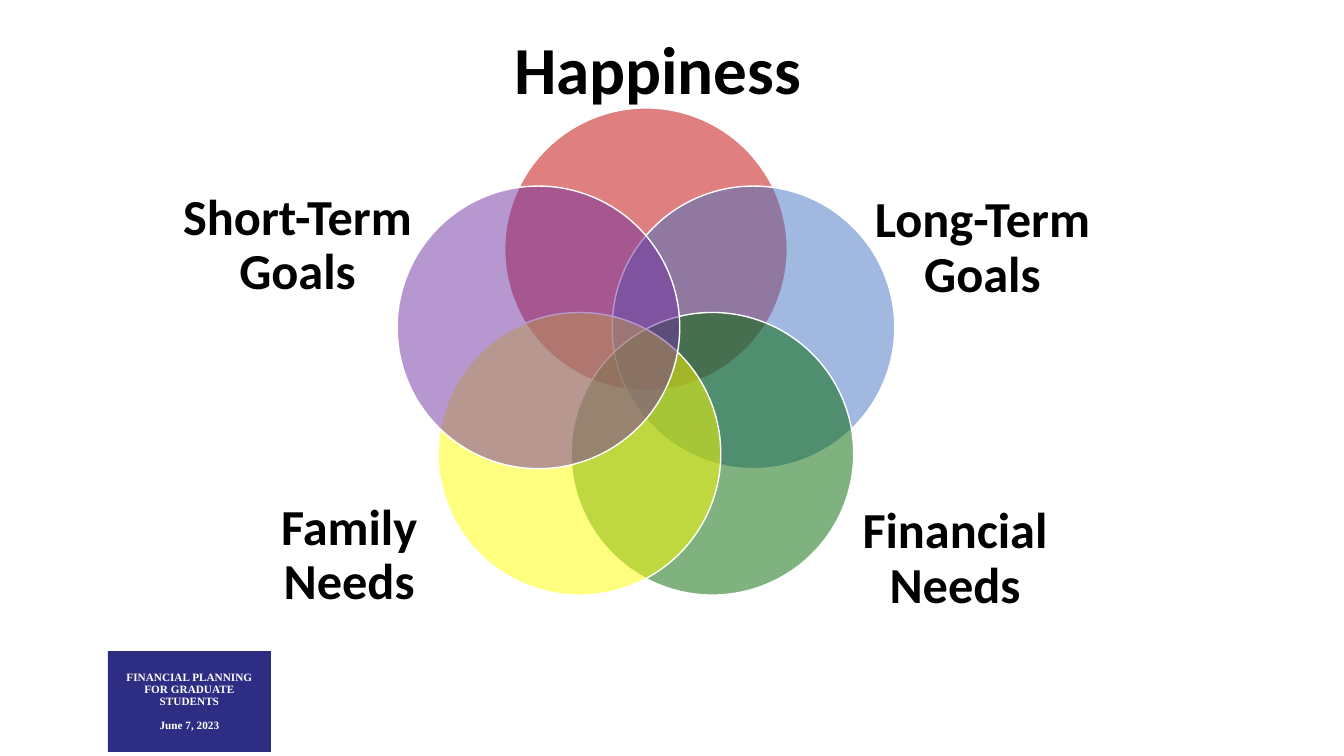
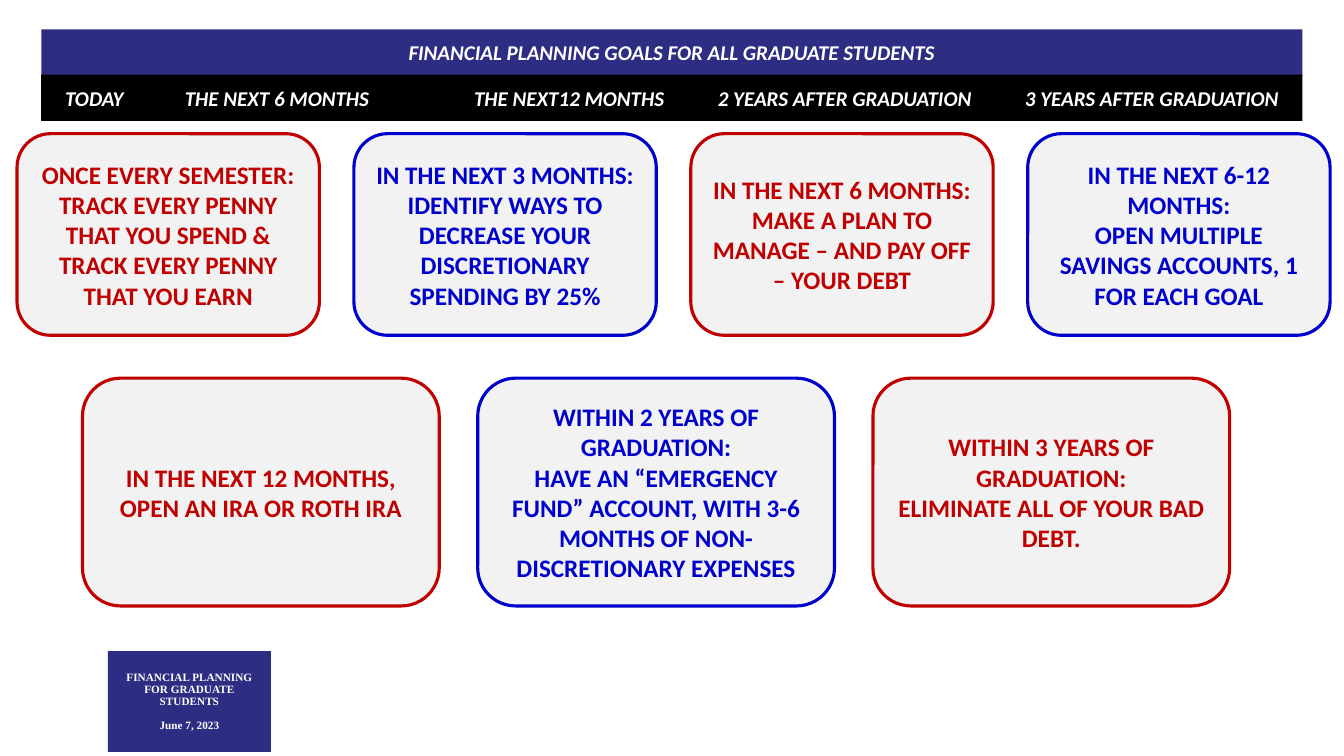
import dataclasses
import math

import lxml.etree
import pptx
import pptx.dml.color
import pptx.enum.shapes
import pptx.enum.text
import pptx.oxml.ns
import pptx.util

Cm = pptx.util.Cm
Pt = pptx.util.Pt
qn = pptx.oxml.ns.qn
SHAPE = pptx.enum.shapes.MSO_SHAPE
ALIGN = pptx.enum.text.PP_ALIGN


@dataclasses.dataclass(frozen=True)
class Theme:
    font: str = "Calibri"
    badge_font: str = "Times New Roman"
    navy: str = "2D2D83"
    black: str = "000000"
    white: str = "FFFFFF"
    card: str = "F2F2F2"
    red: str = "C00000"
    blue: str = "0000CC"
    sky: str = "4472C4"
    green: str = "006600"
    yellow: str = "FFFF00"
    purple: str = "7030A0"
    headline_size: int = 48
    label_size: int = 36
    card_size: int = 18
    band_size: int = 15
    badge_size: int = 8


@dataclasses.dataclass(frozen=True)
class Box:
    left: float
    top: float
    width: float
    height: float


THEME = Theme()
BADGE_BOX = Box(2.72, 16.41, 4.11, 2.54)
HEADLINE_BOX = Box(12.45, 0.73, 8.26, 2.2)
VENN_BOX = Box(3.8, 2.72, 24.96, 12.82)
TITLE_BAND_BOX = Box(1.04, 0.74, 31.78, 1.17)
TIMELINE_BOX = Box(1.04, 1.88, 31.78, 1.17)
FIRST_ROW_BOX = Box(0.43, 3.37, 33.09, 5.08)
SECOND_ROW_BOX = Box(2.08, 9.53, 28.91, 5.74)

CIRCLE_COLORS = [THEME.red, THEME.sky, THEME.green, THEME.yellow, THEME.purple]
VENN_LABELS = [
    ("Long-Term Goals", 8.48, -2.86, 7.39),
    ("Financial Needs", 7.79, 4.97, 5.31),
    ("Family Needs", -7.48, 4.89, 5.31),
    ("Short-Term Goals", -8.78, -2.93, 7.39),
]
TIMELINE = [
    "TODAY",
    "THE NEXT 6 MONTHS",
    "THE NEXT12 MONTHS",
    "2 YEARS AFTER GRADUATION",
    "3 YEARS AFTER GRADUATION",
]
TIMELINE_STOPS = [3.02, 10.31, 16.45, 24.19]
FIRST_ROW = [
    ["ONCE EVERY SEMESTER:", "TRACK EVERY PENNY THAT YOU SPEND & TRACK EVERY PENNY THAT YOU EARN"],
    ["IN THE NEXT 3 MONTHS:", "IDENTIFY WAYS TO DECREASE YOUR DISCRETIONARY SPENDING BY 25%"],
    ["IN THE NEXT 6 MONTHS:", "MAKE A PLAN TO MANAGE – AND PAY OFF – YOUR DEBT"],
    ["IN THE NEXT 6-12 MONTHS:", "OPEN MULTIPLE SAVINGS ACCOUNTS, 1 FOR EACH GOAL"],
]
SECOND_ROW = [
    ["IN THE NEXT 12 MONTHS, OPEN AN IRA OR ROTH IRA"],
    [
        "WITHIN 2 YEARS OF GRADUATION:",
        "HAVE AN “EMERGENCY FUND” ACCOUNT, WITH 3-6 MONTHS OF NON-DISCRETIONARY EXPENSES",
    ],
    ["WITHIN 3 YEARS OF GRADUATION:", "ELIMINATE ALL OF YOUR BAD DEBT."],
]


def rgb(color):
    return pptx.dml.color.RGBColor.from_string(color)


def place(shape, box):
    shape.left, shape.top = Cm(box.left), Cm(box.top)
    shape.width, shape.height = Cm(box.width), Cm(box.height)


def set_inset(frame, inset):
    frame.margin_left = frame.margin_right = Cm(inset)
    frame.margin_top = frame.margin_bottom = Cm(inset)


def add_tab_stops(para, stops):
    tabs = lxml.etree.SubElement(para._p.get_or_add_pPr(), qn("a:tabLst"))
    for stop in stops:
        lxml.etree.SubElement(tabs, qn("a:tab"), pos=str(Cm(stop)), algn="l")


def write(frame, lines, size, color, font=THEME.font, italic=False, align=ALIGN.CENTER,
          spacing=1.0, gap=0, stops=()):
    frame.word_wrap = True
    frame.auto_size = pptx.enum.text.MSO_AUTO_SIZE.NONE
    frame.vertical_anchor = pptx.enum.text.MSO_ANCHOR.MIDDLE
    for index, line in enumerate(lines):
        para = frame.add_paragraph() if index else frame.paragraphs[0]
        para.alignment = align
        para.line_spacing = spacing
        para.space_before = Pt(gap if index else 0)
        if stops:
            add_tab_stops(para, stops)
        span = para.add_run()
        span.text = line
        span.font.name = font
        span.font.size = Pt(size)
        span.font.bold = True
        span.font.italic = italic
        span.font.color.rgb = rgb(color)


def add_panel(page, kind, box, fill, line=None, line_width=1.0):
    panel = page.shapes.add_shape(
        kind, Cm(box.left), Cm(box.top), Cm(box.width), Cm(box.height))
    panel.shadow.inherit = False
    panel.fill.solid()
    panel.fill.fore_color.rgb = rgb(fill)
    if line:
        panel.line.color.rgb = rgb(line)
        panel.line.width = Pt(line_width)
    else:
        panel.line.fill.background()
    return panel


def make_translucent(shape, percent):
    color = shape.element.spPr.find(qn("a:solidFill"))[0]
    lxml.etree.SubElement(color, qn("a:alpha"), val=str(percent * 1000))


def add_badge(page, layout, box):
    badge = add_panel(page, SHAPE.RECTANGLE, box, THEME.navy)
    write(badge.text_frame, ["FINANCIAL PLANNING FOR GRADUATE STUDENTS", "June 7, 2023"],
          THEME.badge_size, THEME.white, font=THEME.badge_font, spacing=0.9, gap=8.6)
    badge.element.nvSpPr.cNvPr.set("id", "20")
    layout.shapes.element.append(badge.element)


def add_title(page, box, text, size, color, fill=None, **text_format):
    title = page.shapes.title
    place(title, box)
    if fill:
        title.fill.solid()
        title.fill.fore_color.rgb = rgb(fill)
    set_inset(title.text_frame, 0)
    write(title.text_frame, [text], size, color, **text_format)


def add_venn(page, box):
    center_x = box.left + box.width / 2
    center_y = box.top + box.height / 2
    diameter = box.height * 5 / 9
    reach = (box.height - diameter) / 2
    for index, color in enumerate(CIRCLE_COLORS):
        angle = math.tau * index / len(CIRCLE_COLORS)
        left = center_x + reach * math.sin(angle) - diameter / 2
        top = center_y - reach * math.cos(angle) - diameter / 2
        circle = add_panel(page, SHAPE.OVAL, Box(left, top, diameter, diameter),
                           color, line=THEME.white)
        make_translucent(circle, 50)
    height = 5.18
    for text, across, down, width in VENN_LABELS:
        label = page.shapes.add_textbox(
            Cm(center_x + across - width / 2), Cm(center_y + down - height / 2),
            Cm(width), Cm(height))
        set_inset(label.text_frame, 0)
        write(label.text_frame, [text], THEME.label_size, THEME.black, spacing=0.9)


def add_timeline(page, box):
    band = add_panel(page, SHAPE.RECTANGLE, box, THEME.black)
    band.text_frame.margin_left = Cm(0.6)
    band.text_frame.margin_right = Cm(0)
    write(band.text_frame, ["\t".join(TIMELINE)], THEME.band_size, THEME.white,
          italic=True, align=ALIGN.LEFT, stops=TIMELINE_STOPS)


def add_goal_row(page, box, goals, gap):
    width = (box.width - gap * (len(goals) - 1)) / len(goals)
    for index, lines in enumerate(goals):
        color = THEME.blue if index % 2 else THEME.red
        card_box = Box(box.left + index * (width + gap), box.top, width, box.height)
        card = add_panel(page, SHAPE.ROUNDED_RECTANGLE, card_box, THEME.card, color, 2.25)
        write(card.text_frame, lines, THEME.card_size, color)


def build_happiness(page):
    add_title(page, HEADLINE_BOX, "Happiness", THEME.headline_size, THEME.black, spacing=0.9)
    add_venn(page, VENN_BOX)


def build_goals(page):
    add_title(page, TITLE_BAND_BOX, "FINANCIAL PLANNING GOALS FOR ALL GRADUATE STUDENTS",
              THEME.band_size, THEME.white, fill=THEME.navy, italic=True)
    add_timeline(page, TIMELINE_BOX)
    add_goal_row(page, FIRST_ROW_BOX, FIRST_ROW, 0.87)
    add_goal_row(page, SECOND_ROW_BOX, SECOND_ROW, 0.97)


def main():
    deck = pptx.Presentation()
    deck.slide_width, deck.slide_height = Cm(33.87), Cm(19.05)
    layout = deck.slide_layouts.get_by_name("Title Only")
    pages = [deck.slides.add_slide(layout) for _ in range(2)]
    add_badge(pages[0], layout, BADGE_BOX)
    build_happiness(pages[0])
    build_goals(pages[1])
    deck.save("out.pptx")


if __name__ == "__main__":
    main()
